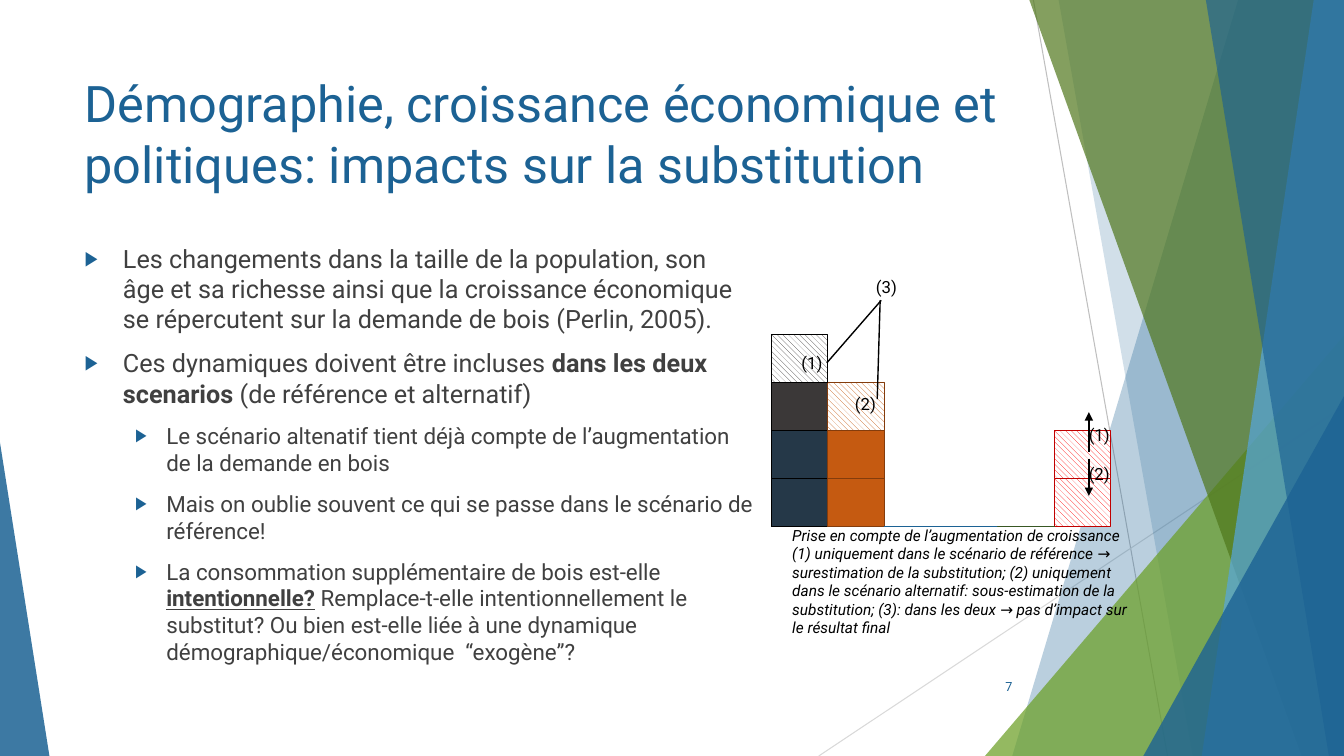
from lxml import etree
from pptx import Presentation
from pptx.chart.data import CategoryChartData
from pptx.dml.color import RGBColor
from pptx.enum.chart import XL_CHART_TYPE
from pptx.enum.dml import MSO_PATTERN
from pptx.enum.shapes import MSO_CONNECTOR, MSO_SHAPE
from pptx.enum.text import MSO_ANCHOR, MSO_AUTO_SIZE, PP_ALIGN
from pptx.oxml import parse_xml
from pptx.oxml.ns import qn
from pptx.util import Inches, Pt

STACKED = XL_CHART_TYPE.COLUMN_STACKED
HATCH = MSO_PATTERN.WIDE_DOWNWARD_DIAGONAL
STRAIGHT = MSO_CONNECTOR.STRAIGHT
TRIANGLE = MSO_SHAPE.ISOSCELES_TRIANGLE
TOP, MIDDLE = MSO_ANCHOR.TOP, MSO_ANCHOR.MIDDLE
LEFT, RIGHT = PP_ALIGN.LEFT, PP_ALIGN.RIGHT

WIDTH, HEIGHT = Inches(13.33), Inches(7.5)
FONT = "Roboto"
CHART_NS = "http://schemas.openxmlformats.org/drawingml/2006/chart"

BLUE = RGBColor(0x1C, 0x62, 0x94)
SKY = RGBColor(0x56, 0xA6, 0xDF)
GREEN = RGBColor(0x6B, 0x9F, 0x25)
OLIVE = RGBColor(0x50, 0x77, 0x1C)
BLACK = RGBColor(0, 0, 0)
WHITE = RGBColor(0xFF, 0xFF, 0xFF)
TEXT_GREY = RGBColor(0x40, 0x40, 0x40)
MID_GREY = RGBColor(0xBF, 0xBF, 0xBF)
LIGHT_GREY = RGBColor(0xD9, 0xD9, 0xD9)
NAVY = RGBColor(0x25, 0x38, 0x48)
CHARCOAL = RGBColor(0x3B, 0x38, 0x38)
ORANGE = RGBColor(0xC5, 0x5A, 0x11)
BROWN = RGBColor(0x84, 0x3C, 0x0C)
RED = RGBColor(0xFF, 0, 0)
DARK_RED = RGBColor(0xC0, 0, 0)
FOREST = RGBColor(0x38, 0x57, 0x23)

TITLE = "Démographie, croissance économique et politiques: impacts sur la substitution"
# Each bullet: level, then (text, emphasis) pieces
BULLETS = [
    (0, [("Les changements dans la taille de la population, son âge et sa richesse ainsi que "
          "la croissance économique se répercutent sur la demande de bois (Perlin, 2005).", "")]),
    (0, [("Ces dynamiques doivent être incluses ", ""), ("dans les deux scenarios", "b"),
         (" (de référence et alternatif)", "")]),
    (1, [("Le scénario altenatif tient déjà compte de l’augmentation de la demande en bois", "")]),
    (1, [("Mais on oublie souvent ce qui se passe dans le scénario de référence!", "")]),
    (1, [("La consommation supplémentaire de bois est-elle ", ""), ("intentionnelle?", "bu"),
         (" Remplace-t-elle intentionnellement le substitut? Ou bien est-elle liée à une "
          "dynamique démographique/économique  “exogène”?", "")]),
]
# Size, left margin and hanging indent per bullet level
LEVELS = [(18, 0.38, 0.38), (16, 0.81, 0.31)]
CAPTION = ("Prise en compte de l’augmentation de croissance (1) uniquement dans le scénario de "
           "référence → surestimation de la substitution; (2) uniquement dans le scénario "
           "alternatif: sous-estimation de la substitution; (3): dans les deux → pas d’impact "
           "sur le résultat final")

# Stacks from bottom to top: column -> (block fill, hatched), outline
STACKS = {
    0: ([(NAVY, False), (NAVY, False), (CHARCOAL, False), (CHARCOAL, True)], BLACK),
    1: ([(ORANGE, False), (ORANGE, False), (ORANGE, True)], BROWN),
    5: ([(RED, True), (RED, True)], DARK_RED),
}
BASELINES = {2: BLUE, 3: BLUE, 4: FOREST}
COLUMNS, ROWS, BLOCK = 6, 4, 100


def px(share):
    """Horizontal length from a percentage of the slide width."""
    return int(WIDTH * share / 100)


def py(share):
    """Vertical length from a percentage of the slide height."""
    return int(HEIGHT * share / 100)


def box(x, y, w, h):
    return px(x), py(y), px(w), py(h)


def style_run(r, size, color, emphasis=""):
    r.font.name, r.font.size = FONT, Pt(size)
    r.font.color.rgb = color
    r.font.bold = "b" in emphasis
    r.font.italic = "i" in emphasis
    r.font.underline = "u" in emphasis


def tint(sp, color, opacity):
    sp.shadow.inherit = False
    sp.line.fill.background()
    sp.fill.solid()
    sp.fill.fore_color.rgb = color
    rgb = sp.fill._xPr.find(".//" + qn("a:srgbClr"))
    etree.SubElement(rgb, qn("a:alpha"), val=str(opacity * 1000))


def add_band(slide, top_x, bottom_x, color, opacity):
    """Slanted band reaching the right edge of the slide."""
    builder = slide.shapes.build_freeform(px(top_x), 0)
    builder.add_line_segments([(WIDTH, 0), (WIDTH, HEIGHT), (px(bottom_x), HEIGHT)])
    tint(builder.convert_to_shape(), color, opacity)


def add_corner(slide, x, y, w, apex, color, opacity):
    """Right triangle standing on the bottom edge of the slide."""
    sp = slide.shapes.add_shape(TRIANGLE, *box(x, y, w, 100 - y))
    sp.adjustments[0] = apex
    tint(sp, color, opacity)


def add_line(slide, x1, y1, x2, y2, color=BLACK, width=1, arrow=False):
    line = slide.shapes.add_connector(STRAIGHT, px(x1), py(y1), px(x2), py(y2))
    line.line.color.rgb = color
    line.line.width = Pt(width)
    if arrow:
        etree.SubElement(line.line._ln, qn("a:tailEnd"), type="triangle")
    etree.SubElement(line._element.spPr, qn("a:effectLst"))


def add_text(slide, bounds, text, size, color=BLACK, emphasis="", align=LEFT, anchor=TOP):
    tf = slide.shapes.add_textbox(*box(*bounds)).text_frame
    tf.word_wrap = True
    tf.vertical_anchor = anchor
    tf.text = text
    p = tf.paragraphs[0]
    p.alignment = align
    style_run(p.runs[0], size, color, emphasis)
    return tf


def place(sp, bounds):
    sp.left, sp.top, sp.width, sp.height = box(*bounds)
    tf = sp.text_frame
    tf.vertical_anchor = TOP
    tf.auto_size = MSO_AUTO_SIZE.NONE
    return tf


def add_bullet(p, level, pieces):
    size, margin, hanging = LEVELS[level]
    p.level = level
    p.alignment = LEFT
    pPr = p._p.get_or_add_pPr()
    pPr.set("marL", str(Inches(margin)))
    pPr.set("indent", str(-Inches(hanging)))
    color = etree.SubElement(pPr, qn("a:buClr"))
    etree.SubElement(color, qn("a:srgbClr"), val=str(BLUE))
    etree.SubElement(pPr, qn("a:buSzPct"), val="80000")
    etree.SubElement(pPr, qn("a:buFont"), typeface="Arial")
    etree.SubElement(pPr, qn("a:buChar"), char="▶")
    p.space_before = Pt(10)
    for text, emphasis in pieces:
        r = p.add_run()
        r.text = text
        style_run(r, size, TEXT_GREY, emphasis)


def add_stacks(slide, bounds):
    data = CategoryChartData()
    data.categories = [str(c + 1) for c in range(COLUMNS)]
    for row in range(ROWS):
        heights = [len(STACKS[c][0]) if c in STACKS else 0 for c in range(COLUMNS)]
        data.add_series(f"Series {row + 1}", [BLOCK if row < h else 0 for h in heights])
    chart = slide.shapes.add_chart(STACKED, *box(*bounds), data).chart
    chart.has_legend = chart.has_title = False
    chart.font.name, chart.font.size = FONT, Pt(10)
    chart.font.color.rgb = BLACK
    chart.category_axis.visible = chart.value_axis.visible = False
    chart.value_axis.has_major_gridlines = False
    chart.value_axis.minimum_scale, chart.value_axis.maximum_scale = 0, ROWS * BLOCK
    plot = chart.plots[0]
    plot.gap_width, plot.overlap, plot.vary_by_categories = 0, 100, False
    for row, series in enumerate(plot.series):
        series.format.fill.solid()
        series.format.fill.fore_color.rgb = NAVY
        for column in range(COLUMNS):
            blocks, outline = STACKS.get(column, ([], BASELINES.get(column)))
            fmt = series.points[column].format
            fmt.line.color.rgb = outline
            fmt.line.width = Pt(0.75)
            if row < len(blocks):
                color, hatched = blocks[row]
                if hatched:
                    fmt.fill.patterned()
                    fmt.fill.pattern = HATCH
                    fmt.fill.back_color.rgb = WHITE
                else:
                    fmt.fill.solid()
                fmt.fill.fore_color.rgb = color
    # Fixed inner plot area
    area = chart._chartSpace.chart.plotArea
    for old in area.findall(qn("c:layout")):
        area.remove(old)
    sizes = "".join(f'<c:{k} val="{v}"/>' for k, v in
                    [("x", 0.02), ("y", 0.12), ("w", 0.96), ("h", 0.86)])
    area.insert(0, parse_xml(
        f'<c:layout xmlns:c="{CHART_NS}"><c:manualLayout><c:layoutTarget val="inner"/>'
        f'<c:xMode val="edge"/><c:yMode val="edge"/>{sizes}</c:manualLayout></c:layout>'))


def add_backdrop(slide):
    add_line(slide, 76.89, 0, 86.87, 100, MID_GREY, 0.75)
    add_line(slide, 100, 53.73, 60.92, 100, LIGHT_GREY, 0.75)
    add_band(slide, 92.12, 75.32, BLUE, 30)
    add_band(slide, 78.77, 88.75, BLUE, 20)
    add_corner(slide, 73.29, 44.4, 26.71, 1, GREEN, 72)
    add_band(slide, 76.59, 96.85, OLIVE, 70)
    add_band(slide, 97.75, 89.42, SKY, 70)
    add_band(slide, 89.72, 98.87, BLUE, 65)
    add_corner(slide, 85.07, 52.4, 14.93, 1, BLUE, 80)
    add_corner(slide, 0, 58.53, 3.68, 0, BLUE, 85)


def main():
    prs = Presentation()
    prs.slide_width, prs.slide_height = WIDTH, HEIGHT
    slide = prs.slides.add_slide(prs.slide_layouts[1])
    add_backdrop(slide)

    # Title and bullets
    tf = place(slide.shapes.title, (5.55, 8.93, 70.52, 19.2))
    tf.text = TITLE
    tf.paragraphs[0].alignment = LEFT
    style_run(tf.paragraphs[0].runs[0], 36, BLUE)
    tf = place(slide.placeholders[1], (5.55, 31.47, 51.31, 56.53))
    for i, (level, pieces) in enumerate(BULLETS):
        add_bullet(tf.add_paragraph() if i else tf.paragraphs[0], level, pieces)
    add_text(slide, (70.44, 88.13, 5.63, 5.33), "7", 9, BLUE, align=RIGHT, anchor=MIDDLE)

    # Chart, caption and annotations
    add_stacks(slide, (56.86, 40.67, 26.33, 29.6))
    add_text(slide, (58.21, 68.93, 27.38, 16.13), CAPTION, 11, emphasis="i")
    for number, x, y in [(1, 58.89, 46), (2, 62.87, 51.47), (3, 64.44, 36),
                         (1, 80.27, 55.47), (2, 80.27, 60.67)]:
        add_text(slide, (x, y, 3.3, 4), f"({number})", 12).margin_right = 0
    add_line(slide, 61.52, 48, 65.57, 39.73)
    add_line(slide, 65.27, 52.8, 65.49, 39.73)
    add_line(slide, 81.02, 60.67, 81.02, 65.6, arrow=True)
    add_line(slide, 81.02, 59.73, 81.02, 54.53, arrow=True)

    prs.save("out.pptx")


if __name__ == "__main__":
    main()
